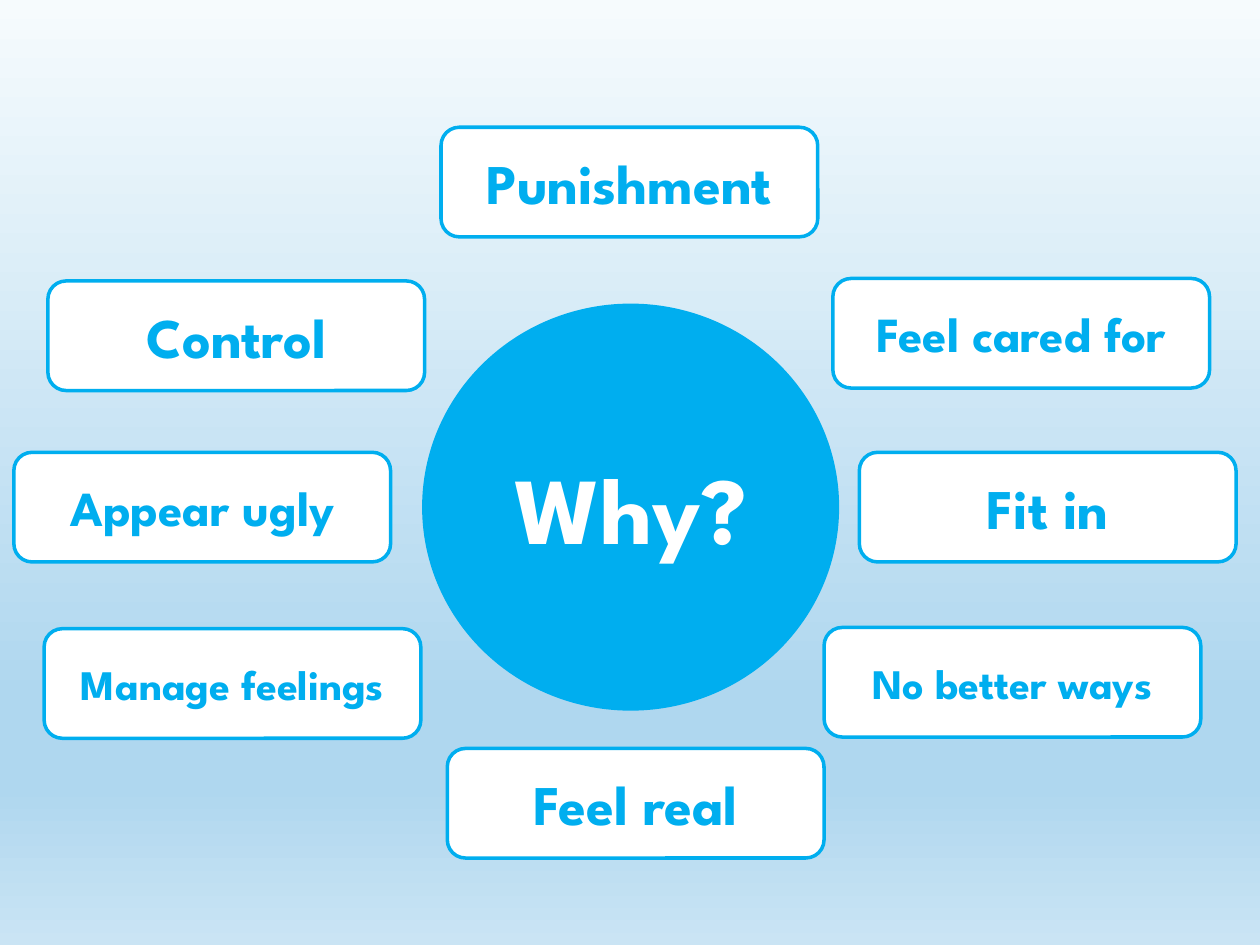
"""Build a slide with a central question ringed by eight reasons."""
from lxml import etree
from pptx import Presentation, util as u
from pptx.dml.color import RGBColor
from pptx.enum import shapes, text
from pptx.oxml.ns import qn

W, H = u.Inches(10), u.Inches(7.5)
FONT = "League Spartan"
COLORS = {"blue": "00AEEF", "white": "FFFFFF"}
BACKGROUND = {0: "F6FBFD", 74: "AFD7EF", 83: "AFD7EF", 100: "CAE4F4"}
CARD_W, CARD_H = 29.9, 11.6
REASONS = [
    ("Control", 3.8, 29.73, 32),
    ("Punishment", 35, 13.47, 32),
    ("Appear ugly", 1.1, 47.87, 28),
    ("Manage feelings", 3.5, 66.53, 24),
    ("Feel real", 35.5, 79.2, 32),
    ("Feel cared for", 66.1, 29.47, 28),
    ("Fit in", 68.2, 47.87, 32),
    ("No better ways", 65.4, 66.4, 24),
]


def color(name):
    """Return the named colour."""
    return RGBColor.from_string(COLORS[name])


def paint_background(s):
    """Fill the slide with a vertical gradient."""
    fill = s.background.fill
    fill.gradient()
    fill.gradient_angle = 270
    stops = s.element.find(".//" + qn("a:gsLst"))
    for stop in list(stops):
        stops.remove(stop)
    for percent, rgb in BACKGROUND.items():
        stop = etree.SubElement(stops, qn("a:gs"), pos=str(percent * 1000))
        etree.SubElement(stop, qn("a:srgbClr"), val=rgb)


def add_label(s, kind, label, box, size, fill, ink):
    """Add a filled shape with a centred bold label, placed in percent of the slide."""
    x, y, w, h = (int(share * side / 100) for share, side in zip(box, (W, H, W, H)))
    sp = s.shapes.add_shape(kind, x, y, w, h)
    sp.shadow.inherit = False
    sp.fill.solid()
    sp.fill.fore_color.rgb = color(fill)
    tf = sp.text_frame
    tf.text = label
    tf.vertical_anchor = text.MSO_ANCHOR.MIDDLE
    p = tf.paragraphs[0]
    p.alignment = text.PP_ALIGN.CENTER
    p.font.name, p.font.size, p.font.bold = FONT, u.Pt(size), True
    p.font.color.rgb = color(ink)
    return sp


def add_question(s):
    """Add the central circle."""
    sp = add_label(s, shapes.MSO_SHAPE.OVAL, "Why?", (33.5, 32.13, 33.1, 43.07),
                   54, "blue", "white")
    sp.line.fill.background()


def add_reason(s, label, x, y, size):
    """Add one outlined reason card."""
    sp = add_label(s, shapes.MSO_SHAPE.ROUNDED_RECTANGLE, label,
                   (x, y, CARD_W, CARD_H), size, "white", "blue")
    sp.line.color.rgb = color("blue")
    sp.line.width = u.Pt(2)


def main():
    """Assemble and save the slide."""
    prs = Presentation()
    prs.slide_width, prs.slide_height = W, H
    s = prs.slides.add_slide(prs.slide_layouts[6])
    paint_background(s)
    add_question(s)
    for reason in REASONS:
        add_reason(s, *reason)
    prs.save("out.pptx")


if __name__ == "__main__":
    main()
